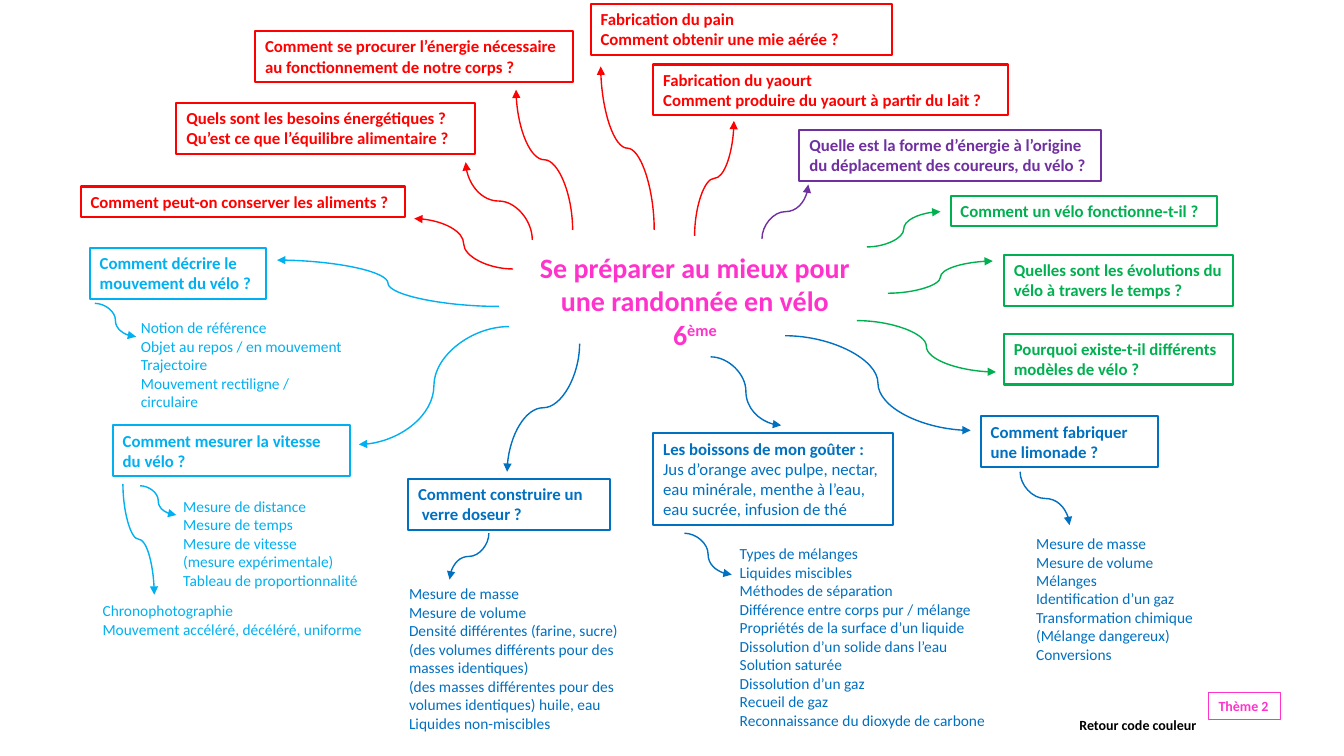
from lxml.etree import SubElement
from pptx import Presentation
from pptx.dml.color import RGBColor
from pptx.enum.shapes import MSO_CONNECTOR as LINK, MSO_SHAPE as SHAPE
from pptx.enum.text import MSO_ANCHOR as ANCHOR, MSO_AUTO_SIZE as FIT, PP_ALIGN as ALIGN
from pptx.oxml.ns import qn
from pptx.util import Pt

FONT = "Calibri"
PURPLE = RGBColor(0x70, 0x30, 0xA0)
PINK = RGBColor(0xFF, 0x33, 0xCC)
RED = RGBColor(0xFF, 0x00, 0x00)
CYAN = RGBColor(0x00, 0xB0, 0xF0)
BLUE = RGBColor(0x00, 0x70, 0xC0)
GREEN = RGBColor(0x00, 0xB0, 0x50)
BLACK = RGBColor(0x00, 0x00, 0x00)

ONE_LINE, TWO_LINES = 21.8, 36.4

QUESTIONS = [
    (PURPLE, 571, 92.9, 215.3, TWO_LINES,
     ["Quelle est la forme d’énergie à l’origine du déplacement des coureurs, du vélo ?"]),
    (RED, 182.2, 22.3, 226.8, TWO_LINES,
     ["Comment se procurer l’énergie nécessaire au fonctionnement de notre corps ?"]),
    (RED, 126, 73.4, 213.1, TWO_LINES,
     ["Quels sont les besoins énergétiques ?", "Qu’est ce que l’équilibre alimentaire ?"]),
    (RED, 57.6, 133.2, 231.8, ONE_LINE, ["Comment peut-on conserver les aliments ?"]),
    (RED, 421.9, 2.9, 215.3, TWO_LINES,
     ["Fabrication du pain", "Comment obtenir une mie aérée ?"]),
    (RED, 466.6, 46.1, 253.4, TWO_LINES,
     ["Fabrication du yaourt", "Comment produire du yaourt à partir du lait ?"]),
    (CYAN, 64.1, 177.1, 126, TWO_LINES, ["Comment décrire le mouvement du vélo ?"]),
    (CYAN, 80.6, 303.8, 169.2, TWO_LINES, ["Comment mesurer la vitesse du vélo ?"]),
    (GREEN, 679, 139.7, 190.1, ONE_LINE, ["Comment un vélo fonctionne-t-il ?"]),
    (GREEN, 717.1, 182.2, 163.4, TWO_LINES,
     ["Quelles sont les évolutions du vélo à travers le temps ?"]),
    (GREEN, 717.1, 238.3, 163.4, TWO_LINES,
     ["Pourquoi existe-t-il différents modèles de vélo ?"]),
    (BLUE, 291.6, 342, 144, TWO_LINES, ["Comment construire un", " verre doseur ?"]),
    (BLUE, 700.6, 297.4, 126.7, TWO_LINES, ["Comment fabriquer une limonade ?"]),
    (BLUE, 466.6, 309.6, 171.4, 65.5,
     ["Les boissons de mon goûter :",
      "Jus d’orange avec pulpe, nectar, eau minérale, menthe à l’eau, "
      "eau sucrée, infusion de thé"]),
]

NOTIONS = [
    (CYAN, 93.6, 223.9, 163.4, 60.5,
     ["Notion de référence", "Objet au repos / en mouvement", "Trajectoire",
      "Mouvement rectiligne / circulaire"]),
    (CYAN, 123.8, 351.4, 147.6, 74.2,
     ["Mesure de distance", "Mesure de temps", "Mesure de vitesse",
      "(mesure expérimentale)", "Tableau de proportionnalité"]),
    (CYAN, 66.2, 426.2, 208.8, 33.8,
     ["Chronophotographie", "Mouvement accéléré, décéléré, uniforme"]),
    (BLUE, 285.1, 414, 169.9, 113.8,
     ["Mesure de masse", "Mesure de volume", "Densité différentes (farine, sucre)",
      "(des volumes différents pour des masses identiques)",
      "(des masses différentes pour des volumes identiques) huile, eau",
      "Liquides non-miscibles"]),
    (BLUE, 521.3, 385.2, 195.8, 140.4,
     ["Types de mélanges", "Liquides miscibles", "Méthodes de séparation",
      "Différence entre corps pur / mélange", "Propriétés de la surface d’un liquide",
      "Dissolution d’un solide dans l’eau", "Solution saturée", "Dissolution d’un gaz",
      "Recueil de gaz", "Reconnaissance du dioxyde de carbone"]),
    (BLUE, 733, 378, 132.5, 100.8,
     ["Mesure de masse", "Mesure de volume", "Mélanges", "Identification d’un gaz",
      "Transformation chimique", "(Mélange dangereux)", "Conversions"]),
]

SIDEWAYS_ARROWS = [
    (CYAN, 67.7, 216.7, 97.2, 240.5),
    (CYAN, 100.1, 347, 126, 367.9),
    (CYAN, 356.4, 218.9, 198, 185.8),
    (CYAN, 363.6, 233.3, 256.3, 317.5),
    (RED, 366.5, 192.2, 295.9, 156.2),
    (GREEN, 619.2, 176.4, 671.8, 151.2),
    (GREEN, 634.3, 209.5, 709.2, 186.5),
    (GREEN, 612, 229, 711.4, 265.7),
    (BLUE, 507.6, 254.9, 558, 303.8),
    (BLUE, 560.9, 239.8, 693.4, 307.4),
    (BLUE, 488.9, 380.9, 522.7, 410.4),
]

UPRIGHT_ARROWS = [
    (PURPLE, 544.3, 170.6, 577.4, 131.8),
    (RED, 409, 164.2, 368.6, 64.1),
    (RED, 380.2, 171.4, 332.6, 115.9),
    (RED, 467.3, 164.2, 429.1, 47.5),
    (RED, 496.1, 168.5, 524.2, 86.4),
    (CYAN, 87.8, 345.6, 110.2, 424.8),
    (BLUE, 414, 245.5, 362.2, 337),
    (BLUE, 349.2, 380.9, 321.1, 414),
    (BLUE, 728.6, 337, 763.9, 375.1),
]


def write(frame, lines, size, color, bold_lines=0, wrap=True, align=ALIGN.LEFT):
    frame.word_wrap = wrap
    frame.auto_size = FIT.SHAPE_TO_FIT_TEXT
    frame.vertical_anchor = ANCHOR.TOP
    for number, line in enumerate(lines):
        para = frame.add_paragraph() if number else frame.paragraphs[0]
        para.text = line
        para.alignment = align
        font = para.font
        font.name, font.size, font.bold = FONT, Pt(size), number < bold_lines
        font.color.rgb = color


def add_frame(page, color, left, top, width, height, weight):
    box = page.shapes.add_shape(SHAPE.RECTANGLE, Pt(left), Pt(top), Pt(width), Pt(height))
    box.shadow.inherit = False
    box.fill.background()
    box.line.color.rgb = color
    box.line.width = Pt(weight)
    return box.text_frame


def add_question(page, color, left, top, width, height, lines):
    frame = add_frame(page, color, left, top, width, height, 1.5)
    bold_lines = 1 if lines[0].endswith(":") else len(lines)
    write(frame, lines, 12, color, bold_lines)


def add_text(page, color, left, top, width, height, lines, size=11, bold_lines=0, wrap=True):
    box = page.shapes.add_textbox(Pt(left), Pt(top), Pt(width), Pt(height))
    write(box.text_frame, lines, size, color, bold_lines, wrap)


def add_arrow(page, color, x1, y1, x2, y2, upright=False):
    turn = 1 if (x2 - x1) * (y2 - y1) < 0 else -1
    if upright:
        mid_x, mid_y = (x1 + x2) / 2, (y1 + y2) / 2
        across, down = turn * (x1 - mid_x), turn * (y1 - mid_y)
        x1, y1, x2, y2 = mid_x + down, mid_y - across, mid_x - down, mid_y + across
    arrow = page.shapes.add_connector(LINK.CURVE, Pt(x1), Pt(y1), Pt(x2), Pt(y2))
    arrow.line.color.rgb = color
    arrow.line.width = Pt(1)
    properties = arrow._element.spPr
    if upright:
        properties.find(qn("a:xfrm")).set("rot", str(turn * 90 % 360 * 60000))
    SubElement(properties.find(qn("a:ln")), qn("a:tailEnd"), type="triangle")
    SubElement(properties, qn("a:effectLst"))


def add_title(page):
    title = page.shapes.title
    title.left, title.top, title.width, title.height = Pt(375.1), Pt(175), Pt(242.6), Pt(79.9)
    lines = ["Se préparer au mieux pour", "une randonnée en vélo", "6"]
    write(title.text_frame, lines, 20, PINK, len(lines), False, ALIGN.CENTER)
    span = title.text_frame.paragraphs[-1].add_run()
    span.text = "ème"
    span._r.get_or_add_rPr().set("baseline", "30000")


def main():
    deck = Presentation()
    deck.slide_width, deck.slide_height = Pt(960), Pt(540)
    page = deck.slides.add_slide(deck.slide_layouts[5])
    add_title(page)
    for question in QUESTIONS:
        add_question(page, *question)
    for notion in NOTIONS:
        add_text(page, *notion)
    for arrow in SIDEWAYS_ARROWS:
        add_arrow(page, *arrow)
    for arrow in UPRIGHT_ARROWS:
        add_arrow(page, *arrow, upright=True)
    theme = add_frame(page, PINK, 863.3, 494.6, 51.1, 19.4, 0.75)
    write(theme, ["Thème 2"], 10, PINK, 1, False)
    add_text(page, BLACK, 763.9, 508.3, 99.4, 19.4, ["Retour code couleur"], 10, 1, False)
    deck.save("out.pptx")


if __name__ == "__main__":
    main()
